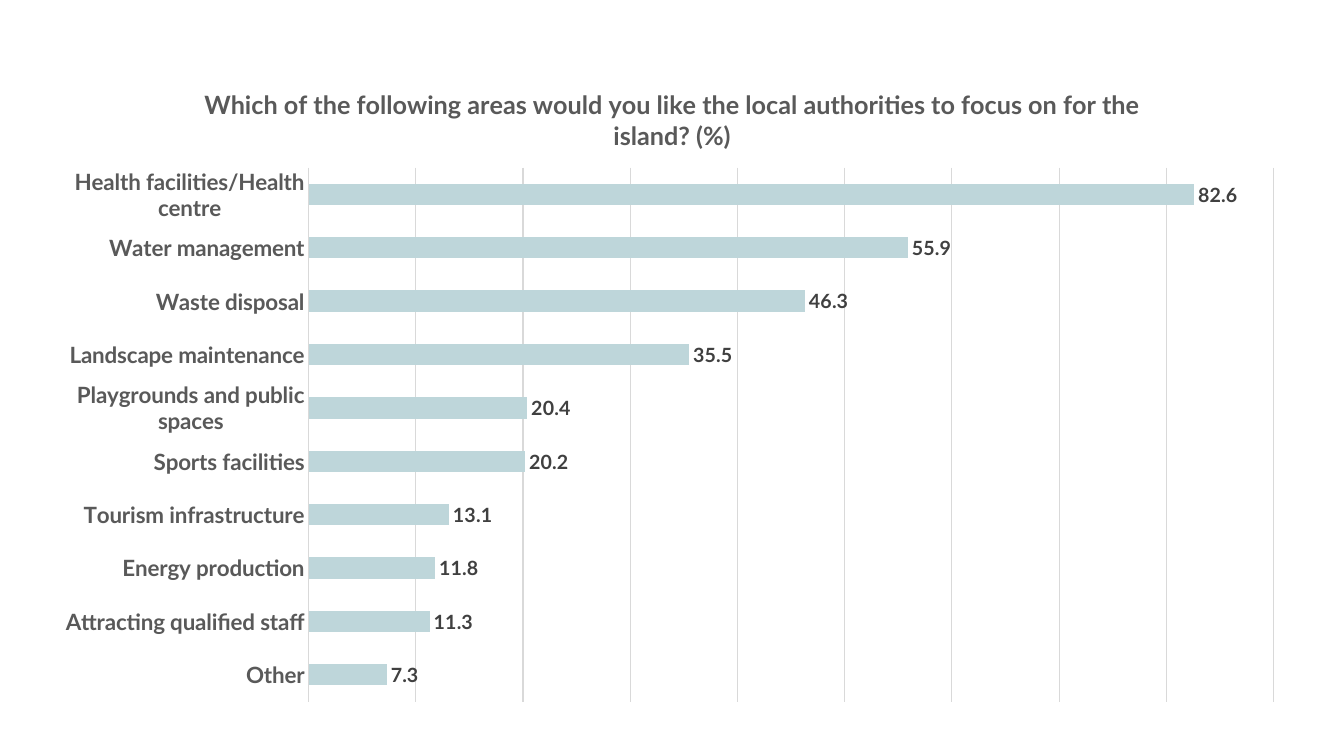
from lxml import etree
from pptx import Presentation
from pptx.chart.data import CategoryChartData
from pptx.dml.color import RGBColor
from pptx.enum.chart import XL_CHART_TYPE, XL_LABEL_POSITION, XL_TICK_MARK
from pptx.oxml.ns import qn
from pptx.util import Inches, Pt

BAR = XL_CHART_TYPE.BAR_CLUSTERED
OUT_END = XL_LABEL_POSITION.OUTSIDE_END
NO_TICK = XL_TICK_MARK.NONE
FACE = "Lato"
WIDE, HIGH = 13.33, 7.5
QUERY = ("Which of the following areas would you like the local "
         "authorities to focus on for the island? (%)")
AREAS = {
    "Other": 7.3,
    "Attracting qualified staff": 11.3,
    "Energy production": 11.8,
    "Tourism infrastructure": 13.1,
    "Sports facilities": 20.2,
    "Playgrounds and public spaces": 20.4,
    "Landscape maintenance": 35.5,
    "Waste disposal": 46.3,
    "Water management": 55.9,
    "Health facilities/Health centre": 82.6,
}


def paint(color, code):
    color.rgb = RGBColor.from_string(code)


def style(font, size, code):
    font.name, font.size, font.bold = FACE, Pt(size), True
    paint(font.color, code)


def set_plot(chart, **box):
    """Fix the inner plot area, as shares of the chart's size."""
    area = chart._chartSpace.chart.plotArea
    for old in area.findall(qn("c:layout")):
        area.remove(old)
    layout = etree.Element(qn("c:layout"))
    area.insert(0, layout)
    manual = etree.SubElement(layout, qn("c:manualLayout"))
    rules = {"layoutTarget": "inner", "xMode": "edge", "yMode": "edge", **box}
    for name, value in rules.items():
        etree.SubElement(manual, qn("c:" + name)).set("val", str(value))


def add_title(chart):
    chart.has_title = True
    frame = chart.chart_title.text_frame
    frame.text = QUERY
    style(frame.paragraphs[0].font, 18, "595959")
    chart.chart_title.include_in_layout = False


def set_axes(chart):
    cat, val = chart.category_axis, chart.value_axis
    cat.major_tick_mark = cat.minor_tick_mark = NO_TICK
    cat.format.line.fill.background()
    style(cat.tick_labels.font, 16, "595959")
    val.minimum_scale, val.maximum_scale, val.major_unit = 0, 90, 10
    val.has_major_gridlines = True
    grid = val.major_gridlines.format.line
    grid.width = Pt(0.75)
    paint(grid.color, "D9D9D9")
    val.visible = False


def set_bars(plot):
    plot.gap_width = 150
    plot.vary_by_categories = False
    fill = plot.series[0].format.fill
    fill.solid()
    paint(fill.fore_color, "BED6DA")
    plot.has_data_labels = True
    labels = plot.data_labels
    labels.show_value = True
    labels.position = OUT_END
    labels.number_format = "###0.0"
    labels.number_format_is_linked = False
    style(labels.font, 14, "404040")


def add_survey(slide, left, top, width, height):
    data = CategoryChartData(number_format="###0.0")
    data.categories = AREAS.keys()
    data.add_series("Series 1", AREAS.values())
    box = [Inches(n) for n in (left, top, width, height)]
    chart = slide.shapes.add_chart(BAR, *box, data).chart
    chart.has_legend = False
    chart.font.name, chart.font.size = FACE, Pt(10)
    add_title(chart)
    set_axes(chart)
    set_bars(chart.plots[0])
    set_plot(chart, x=0.21, y=0.16, w=0.77, h=0.82)


def main():
    deck = Presentation()
    deck.slide_width, deck.slide_height = Inches(WIDE), Inches(HIGH)
    slide = deck.slides.add_slide(deck.slide_layouts[6])
    side, top = 0.45, 0.63
    add_survey(slide, side, top, WIDE - 2 * side, 6.46)
    deck.save("out.pptx")


if __name__ == "__main__":
    main()
